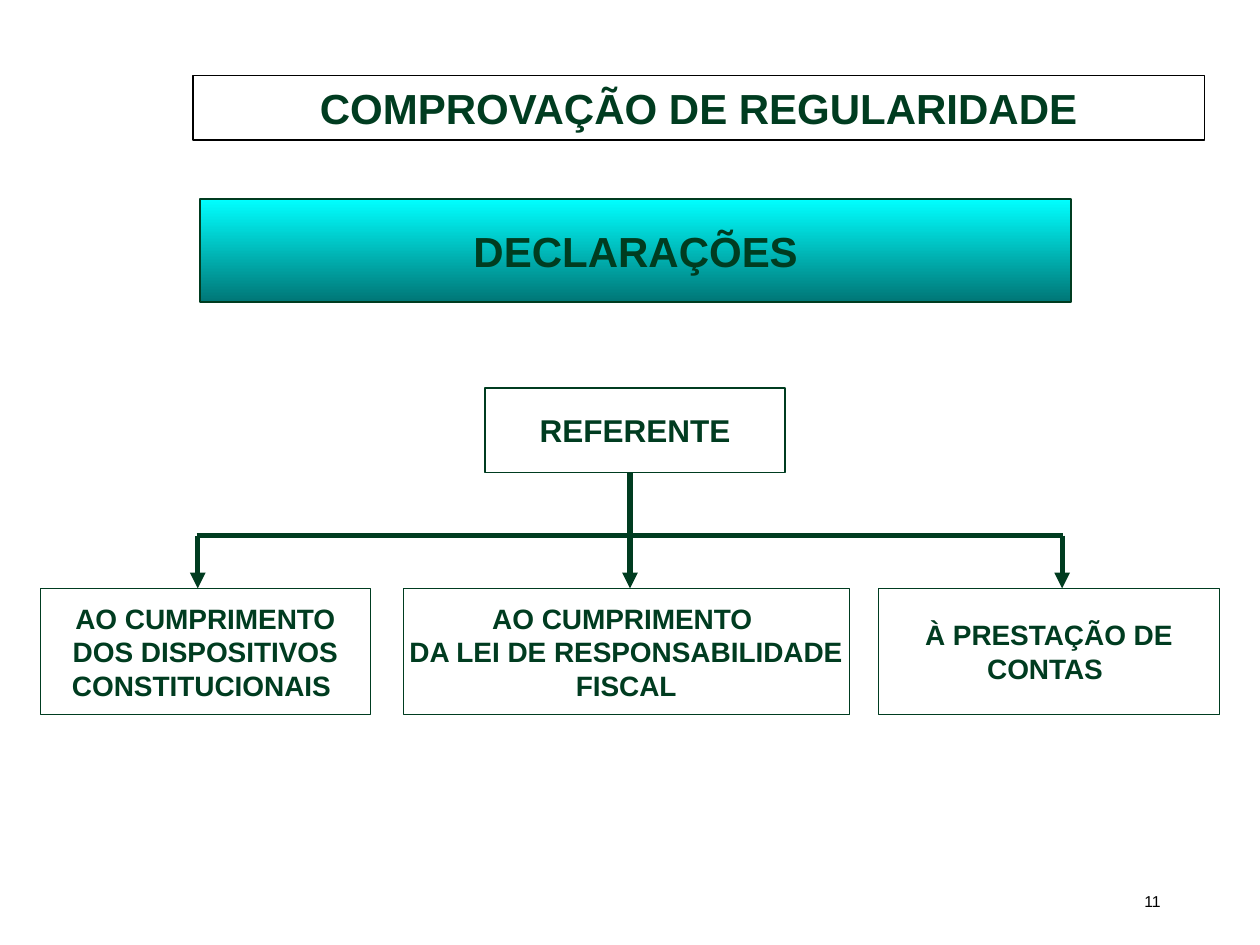
from dataclasses import dataclass

from lxml import etree
from pptx import Presentation
from pptx.dml.color import RGBColor
from pptx.enum import shapes, text
from pptx.oxml.ns import qn
from pptx.util import Inches, Pt


@dataclass(frozen=True)
class Theme:
    font: str = "Arial"
    green: str = "003C20"
    black: str = "000000"
    gradient: tuple = ("00FFFF", "007676")
    heading: int = 24
    topic: int = 18
    branch: int = 16
    number: int = 9
    thin: float = 0.75
    medium: float = 1
    thick: float = 3


THEME = Theme()

# Wording, (left, top, width, height)
TITLE = "COMPROVAÇÃO DE REGULARIDADE", (1.59 - 0.06, 0.6, 8.03, 0.51)
DECLARATIONS = "DECLARAÇÕES", (1.59, 1.58, 6.91, 0.82)
TOPIC = "REFERENTE", (3.85, 3.08, 2.38, 0.67)
PAGE_NUMBER = "11", (7.06, 6.95, 2.25, 0.4)

# Lines of wording, left, width, x of the arrow that points at the box
BRANCHES = [
    (("AO CUMPRIMENTO", "DOS DISPOSITIVOS", "CONSTITUCIONAIS "), 0.32, 2.62, 1.57),
    (("AO CUMPRIMENTO ", "DA LEI DE RESPONSABILIDADE", "FISCAL"), 3.2, 3.54, 5),
    (("À PRESTAÇÃO DE", "CONTAS "), 6.97, 2.71, 8.43),
]
BRANCH_TOP, BRANCH_HEIGHT = 4.67, 1
RAIL_Y = 4.25
RAIL_OVERHANG = 0.01


def rgb(value):
    return RGBColor.from_string(value)


def write(holder, wording, size, color=THEME.green, bold=True,
          align=text.PP_ALIGN.CENTER, wrap=False):
    """Fill a shape with text, one paragraph for each line."""
    frame = holder.text_frame
    frame.word_wrap = wrap
    frame.vertical_anchor = text.MSO_ANCHOR.MIDDLE
    frame.text = wording
    for paragraph in frame.paragraphs:
        paragraph.alignment = align
        font = paragraph.runs[0].font
        font.name, font.size, font.bold = THEME.font, Pt(size), bold
        font.color.rgb = rgb(color)


def add_box(slide, wording, place, size, border=THEME.green,
            weight=THEME.thin, gradient=None, wrap=False):
    box = slide.shapes.add_shape(shapes.MSO_SHAPE.RECTANGLE, *map(Inches, place))
    box.shadow.inherit = False
    box.line.color.rgb, box.line.width = rgb(border), Pt(weight)
    if gradient:
        box.fill.gradient()
        box.fill.gradient_angle = 270
        for stop, color in zip(box.fill.gradient_stops, gradient):
            stop.color.rgb = rgb(color)
    else:
        box.fill.background()
    write(box, wording, size, wrap=wrap)


def add_line(slide, start, end, arrow=False):
    line = slide.shapes.add_connector(
        shapes.MSO_CONNECTOR.STRAIGHT, *map(Inches, (*start, *end)))
    line.line.color.rgb, line.line.width = rgb(THEME.green), Pt(THEME.thick)
    if arrow:
        etree.SubElement(line.line._get_or_add_ln(), qn("a:tailEnd"), type="triangle")
    etree.SubElement(line._element.spPr, qn("a:effectLst"))


def main():
    deck = Presentation()
    deck.slide_width, deck.slide_height = Inches(10), Inches(7.5)
    slide = deck.slides.add_slide(deck.slide_layouts[6])

    number, number_place = PAGE_NUMBER
    number_box = slide.shapes.add_textbox(*map(Inches, number_place))
    write(number_box, number, THEME.number, color=THEME.black, bold=False,
          align=text.PP_ALIGN.RIGHT, wrap=True)

    add_box(slide, *DECLARATIONS, THEME.heading, weight=THEME.medium,
            gradient=THEME.gradient)
    for lines, left, width, _ in BRANCHES:
        add_box(slide, "\n".join(lines),
                (left, BRANCH_TOP, width, BRANCH_HEIGHT), THEME.branch)
    add_box(slide, *TOPIC, THEME.topic)

    arrow_xs = [branch[-1] for branch in BRANCHES]
    add_line(slide, (arrow_xs[0] - RAIL_OVERHANG, RAIL_Y),
             (arrow_xs[-1] + RAIL_OVERHANG, RAIL_Y))
    _, (_, topic_top, _, topic_height) = TOPIC
    trunk_x = arrow_xs[1]
    for x in arrow_xs:
        start_y = topic_top + topic_height if x == trunk_x else RAIL_Y
        add_line(slide, (x, start_y), (x, BRANCH_TOP), arrow=True)

    add_box(slide, *TITLE, THEME.heading, border=THEME.black,
            weight=THEME.medium, wrap=True)
    deck.save("out.pptx")


if __name__ == "__main__":
    main()
